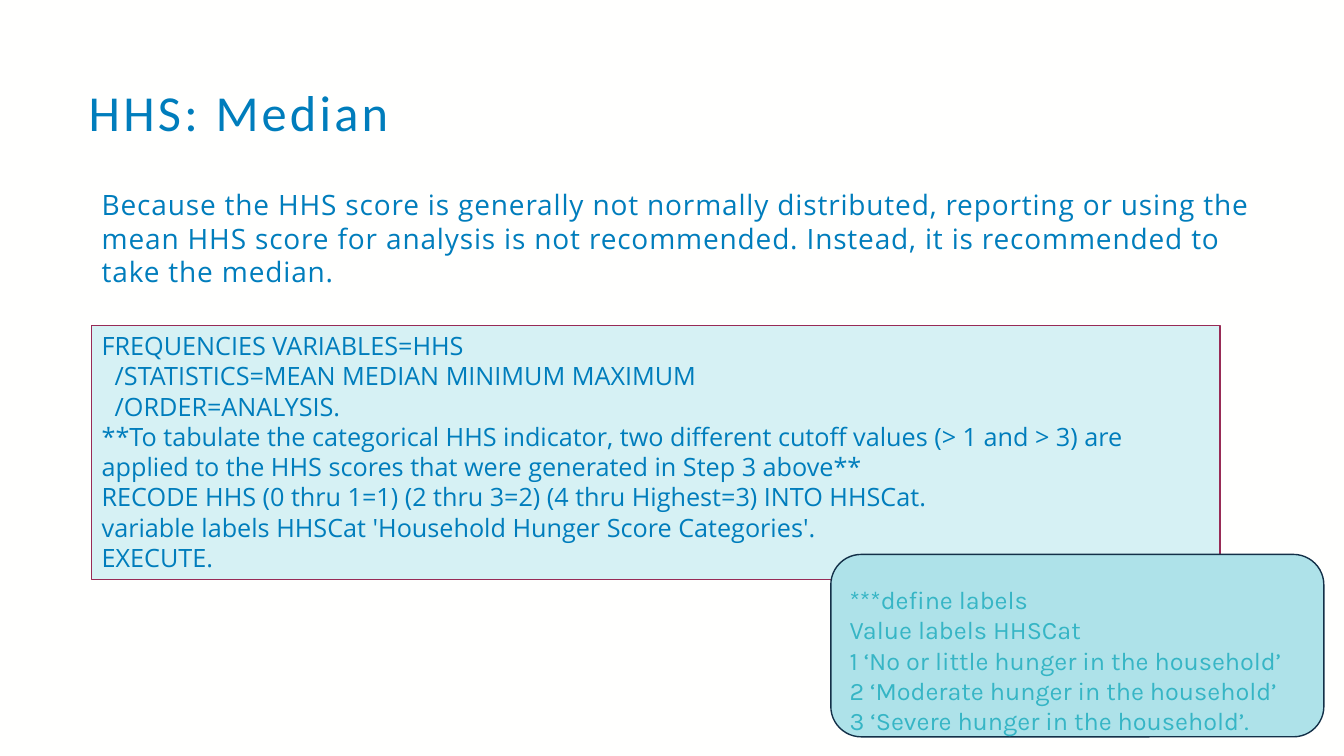
from pptx import Presentation
from pptx.dml.color import RGBColor
from pptx.enum.shapes import MSO_SHAPE
from pptx.enum.text import MSO_ANCHOR, PP_ALIGN
from pptx.util import Emu, Pt

PX = 9144  # 100 px to the inch
BLUE = "007DBC"

SYNTAX = [
    "FREQUENCIES VARIABLES=HHS",
    "  /STATISTICS=MEAN MEDIAN MINIMUM MAXIMUM",
    "  /ORDER=ANALYSIS.",
    "**To tabulate the categorical HHS indicator, two different cutoff values "
    "(> 1 and > 3) are applied to the HHS scores that were generated in Step 3 above**",
    "RECODE HHS (0 thru 1=1) (2 thru 3=2) (4 thru Highest=3) INTO HHSCat.",
    "variable labels HHSCat 'Household Hunger Score Categories'.",
    "EXECUTE.",
]
LABELS = [
    "***define labels",
    "Value labels HHSCat",
    "1 ‘No or little hunger in the household’",
    "2 ‘Moderate hunger in the household’",
    "3 ‘Severe hunger in the household’.",
]


def px(*lengths):
    return [Emu(n * PX) for n in lengths]


def rgb(hex_color):
    return RGBColor.from_string(hex_color)


def write(tf, lines, font, size, color, spacing=0):
    """Fill a text frame, one paragraph a line; spacing is in 1/100 pt."""
    tf.word_wrap = True
    for i, line in enumerate(lines):
        p = tf.paragraphs[0] if i == 0 else tf.add_paragraph()
        p.alignment = PP_ALIGN.LEFT
        p.font.name = font
        p.font.size = Pt(size)
        p.font.color.rgb = rgb(color)
        r = p.add_run()
        r.text = line
        if spacing:
            r._r.get_or_add_rPr().set("spc", str(spacing))


def add_title(s, box, text):
    title = s.shapes.title
    title.left, title.top, title.width, title.height = px(*box)
    tf = title.text_frame
    tf.vertical_anchor = MSO_ANCHOR.MIDDLE
    write(tf, [text], "Calibri", 36, BLUE, 230)
    tf.paragraphs[0].line_spacing = 0.9


def add_text(s, box, text):
    tf = s.shapes.add_textbox(*px(*box)).text_frame
    write(tf, [text], "Open Sans", 20, BLUE, 60)


def add_code_panel(s, kind, box, fill, line, lines, font, color, top_inset):
    sp = s.shapes.add_shape(kind, *px(*box))
    sp.shadow.inherit = False
    sp.fill.solid()
    sp.fill.fore_color.rgb = rgb(fill)
    sp.line.color.rgb = rgb(line)
    sp.line.width = Pt(1)
    tf = sp.text_frame
    tf.vertical_anchor = MSO_ANCHOR.TOP
    tf.margin_top, tf.margin_bottom = px(top_inset, 0)
    write(tf, lines, font, 18, color)


def main():
    prs = Presentation()
    prs.slide_width, prs.slide_height = px(1333, 750)
    s = prs.slides.add_slide(prs.slide_layouts[5])
    s.background.fill.solid()
    s.background.fill.fore_color.rgb = rgb("FFFFFE")

    add_title(s, (78, 78, 1209, 72), "HHS: Median")
    add_text(s, (91, 181, 1168, 111),
             "Because the HHS score is generally not normally distributed, reporting "
             "or using the mean HHS score for analysis is not recommended. Instead, "
             "it is recommended to take the median.")
    add_code_panel(s, MSO_SHAPE.RECTANGLE, (91, 323, 1119, 252), "D6F1F4", "982B56",
                   SYNTAX, "Open Sans", BLUE, 5)
    add_code_panel(s, MSO_SHAPE.ROUNDED_RECTANGLE, (824, 550, 489, 181), "AEE2E9",
                   "133048", LABELS, "Karla", "36B5C5", 21)
    prs.save("out.pptx")


if __name__ == "__main__":
    main()
